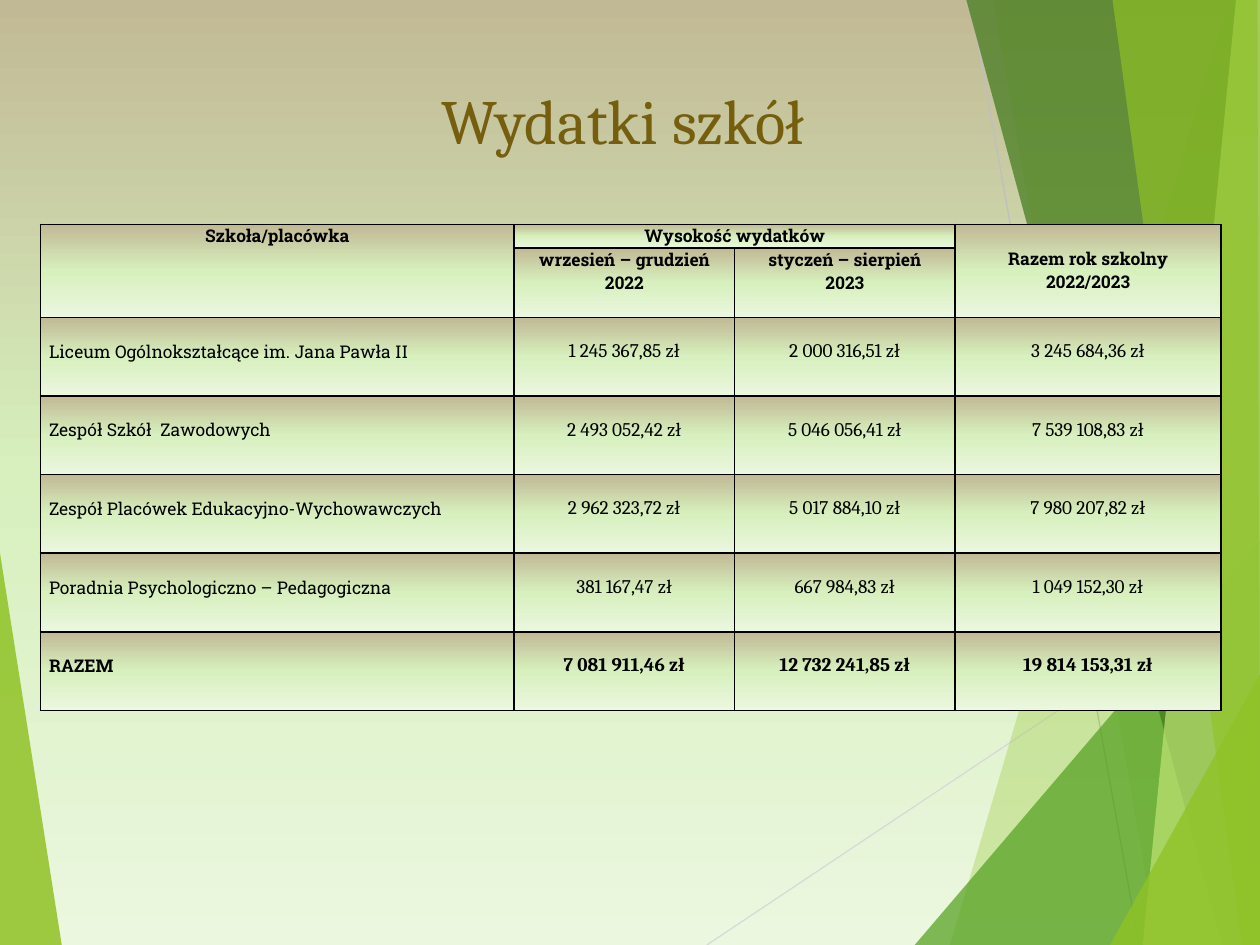
from copy import deepcopy
from itertools import product
from lxml.etree import SubElement
from pptx import Presentation
from pptx.dml.color import RGBColor
from pptx.enum.shapes import MSO_CONNECTOR as Connector
from pptx.enum.text import MSO_ANCHOR as Anchor, PP_ALIGN as Align
from pptx.oxml import parse_xml
from pptx.oxml.ns import nsdecls, qn
from pptx.util import Inches, Pt

COLORS = {
    "sand": "C1B995", "mint": "D7F0BD", "pale": "EBF7DF",
    "lime": "90C226", "leaf": "54A021", "forest": "3F7819", "light": "C0E474",
    "silver": "D9D9D9", "grey": "BFBFBF", "title": "755E0D", "ink": "000000",
}
GRADIENT = [(0, "sand"), (0.5, "mint"), (1, "pale")]
LEFT_FACET = ([(0, 4.39), (0.49, 7.5), (0, 7.5)], "lime", 85)
RAYS = [((5.61, 7.5), (10, 4.57), "silver"), ((7.7, 0), (9.04, 7.5), "grey")]
RIGHT_FACETS = [
    ([(9.75, 0), (7.54, 7.5), (10, 7.5), (10, 0)], "lime", 30),
    ([(7.88, 0), (9.19, 7.5), (10, 7.5), (10, 0)], "lime", 20),
    ([(7.26, 7.5), (10, 4.29), (10, 7.5)], "leaf", 72),
    ([(7.67, 0), (9.7, 7.5), (10, 7.5), (10, 0)], "forest", 70),
    ([(9.81, 0), (9.07, 7.5), (10, 7.5), (10, 0)], "light", 70),
    ([(8.83, 0), (9.86, 7.5), (10, 7.5), (9.98, 0)], "lime", 65),
    ([(8.81, 7.5), (10, 5.35), (10, 7.5)], "lime", 80),
]
COLUMNS = [3.76, 1.75, 1.75, 2.11]
HEADER_ROWS = [0.19, 0.55]
HEADERS = [
    (0, 0, 1, 0, ["Szkoła/placówka"], 0),
    (0, 1, 0, 2, ["Wysokość wydatków"], 0),
    (0, 3, 1, 3, ["Razem rok szkolny", "2022/2023"], 0.18),
    (1, 1, 1, 1, ["wrzesień – grudzień", "2022"], 0),
    (1, 2, 1, 2, ["styczeń – sierpień", "2023"], 0),
]
SPENDING = [
    ("Liceum Ogólnokształcące im. Jana Pawła II",
     "1 245 367,85 zł", "2 000 316,51 zł", "3 245 684,36 zł"),
    ("Zespół Szkół  Zawodowych",
     "2 493 052,42 zł", "5 046 056,41 zł", "7 539 108,83 zł"),
    ("Zespół Placówek Edukacyjno-Wychowawczych",
     "2 962 323,72 zł", "5 017 884,10 zł", "7 980 207,82 zł"),
    ("Poradnia Psychologiczno – Pedagogiczna",
     "381 167,47 zł", "667 984,83 zł", "1 049 152,30 zł"),
    ("RAZEM", "7 081 911,46 zł", "12 732 241,85 zł", "19 814 153,31 zł"),
]
LABEL = {"name": "Roboto Slab", "size": Pt(10), "bold": False}
AMOUNT = {"name": "Cambria", "size": Pt(11), "bold": False}
HEADING = {"name": "Cambria", "size": Pt(36), "bold": False}


def rgb(color):
    """Return the named colour as an RGBColor."""
    return RGBColor.from_string(COLORS[color])


def fill_gradient(fill, holder):
    """Give a fill the vertical three-stop gradient."""
    fill.gradient()
    fill.gradient_angle = 270
    stops = holder.find(".//" + qn("a:gsLst"))
    stops.insert(1, deepcopy(stops[0]))
    for stop, (position, color) in zip(fill.gradient_stops, GRADIENT):
        stop.position = position
        stop.color.rgb = rgb(color)


def write(frame, lines, style, color, align):
    """Write one formatted paragraph for each line of text."""
    frame.word_wrap = True
    for index, line in enumerate(lines):
        para = frame.add_paragraph() if index else frame.paragraphs[0]
        para.alignment = align
        span = para.add_run()
        span.text = line
        span.font.color.rgb = rgb(color)
        for name, value in style.items():
            setattr(span.font, name, value)


def add_facet(page, points, color, opacity):
    """Draw one translucent polygon."""
    start, *rest = [(Inches(x), Inches(y)) for x, y in points]
    builder = page.shapes.build_freeform(*start)
    builder.add_line_segments(rest, close=True)
    facet = builder.convert_to_shape()
    facet.shadow.inherit = False
    facet.fill.solid()
    facet.fill.fore_color.rgb = rgb(color)
    facet.line.fill.background()
    tint = facet._element.spPr.find(".//" + qn("a:srgbClr"))
    SubElement(tint, qn("a:alpha"), val=str(opacity * 1000))


def add_ray(page, start, end, color):
    """Draw one thin straight line across the slide."""
    ray = page.shapes.add_connector(
        Connector.STRAIGHT, *[Inches(value) for value in start + end])
    ray.line.color.rgb = rgb(color)
    ray.line.width = Pt(0.75)
    SubElement(ray._element.spPr, qn("a:effectLst"))


def add_backdrop(page):
    """Paint the background, the facets and the rays."""
    fill_gradient(page.background.fill, page._element)
    add_facet(page, *LEFT_FACET)
    for ray in RAYS:
        add_ray(page, *ray)
    for facet in RIGHT_FACETS:
        add_facet(page, *facet)


def add_title(page, left, top, width, height):
    """Place the centred slide title."""
    box = page.shapes.add_textbox(left, top, width, height)
    box.text_frame.vertical_anchor = Anchor.TOP
    write(box.text_frame, ["Wydatki szkół"], HEADING, "title", Align.CENTER)


def format_cell(cell):
    """Give a cell its margins, gradient and black borders."""
    margins = {"margin_left": 0.07, "margin_right": 0.07,
               "margin_top": 0, "margin_bottom": 0}
    for name, value in margins.items():
        setattr(cell, name, Inches(value))
    cell.vertical_anchor = Anchor.TOP
    props = cell._tc.get_or_add_tcPr()
    fill_gradient(cell.fill, props)
    for index, side in enumerate(["lnL", "lnR", "lnT", "lnB"]):
        props.insert(index, parse_xml(
            f'<a:{side} {nsdecls("a")} w="{Pt(1)}"><a:solidFill>'
            f'<a:srgbClr val="{COLORS["ink"]}"/></a:solidFill></a:{side}>'))


def add_spending_table(page, left, top, width, height):
    """Place the table of spending by school."""
    first = len(HEADER_ROWS)
    count = first + len(SPENDING)
    table = page.shapes.add_table(
        count, len(COLUMNS), left, top, width, height).table
    table.first_row = table.horz_banding = False
    for column, size in zip(table.columns, COLUMNS):
        column.width = Inches(size)
    body_height = (height - Inches(sum(HEADER_ROWS))) // len(SPENDING)
    heights = [Inches(size) for size in HEADER_ROWS]
    heights += [body_height] * len(SPENDING)
    for row, size in zip(table.rows, heights):
        row.height = size
    for row, column in product(range(count), range(len(COLUMNS))):
        format_cell(table.cell(row, column))
    for row, column, last_row, last_column, lines, gap in HEADERS:
        cell = table.cell(row, column)
        if (row, column) != (last_row, last_column):
            cell.merge(table.cell(last_row, last_column))
        cell.margin_top = Inches(gap)
        write(cell.text_frame, lines, {**LABEL, "bold": True}, "ink", Align.CENTER)
    for row, record in enumerate(SPENDING, first):
        for column, text in enumerate(record):
            cell = table.cell(row, column)
            cell.margin_top = Inches(0.18)
            style = {**(AMOUNT if column else LABEL), "bold": row == count - 1}
            align = Align.CENTER if column else Align.LEFT
            write(cell.text_frame, [text], style, "ink", align)


def main():
    """Build the slide and save the deck."""
    deck = Presentation()
    deck.slide_width, deck.slide_height = Inches(10), Inches(7.5)
    page = deck.slides.add_slide(deck.slide_layouts[6])
    add_backdrop(page)
    add_title(page, Inches(0.2), Inches(0.6), Inches(9.5), Inches(0.92))
    add_spending_table(
        page, Inches(0.32), Inches(1.78), Inches(sum(COLUMNS)), Inches(3.86))
    deck.save("out.pptx")


if __name__ == "__main__":
    main()
